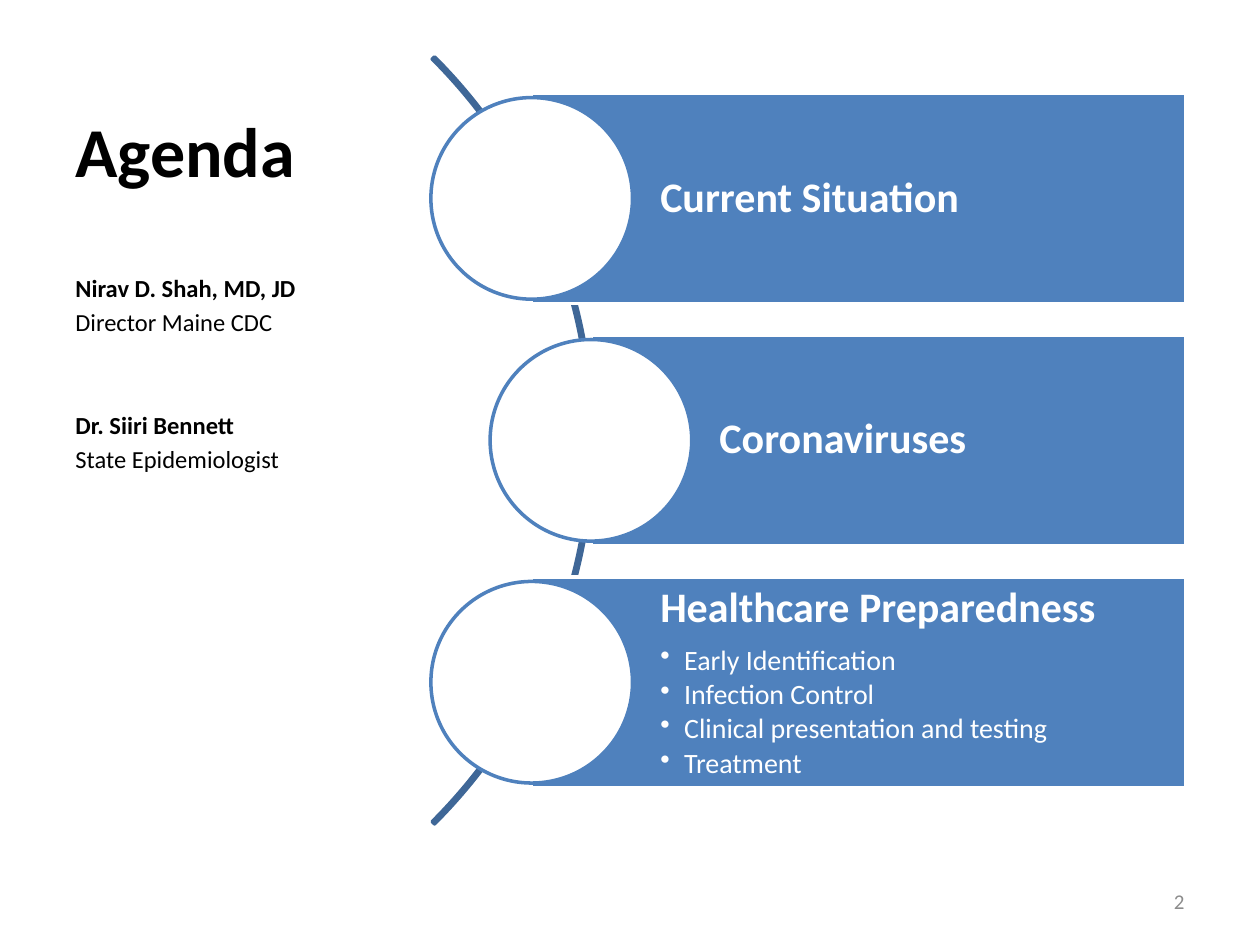
from lxml import etree
from pptx import Presentation, util as u
from pptx.dml.color import RGBColor
from pptx.enum import shapes, text
from pptx.oxml.ns import qn

# Content
TITLE = "Agenda"
SPEAKERS = [
    ("Nirav D. Shah, MD, JD", "Director Maine CDC"),
    ("Dr. Siiri Bennett", "State Epidemiologist"),
]
# topic, its details, column of its circle's centre
TOPICS = [
    ("Current Situation", [], 4.22),
    ("Coronaviruses", [], 4.69),
    ("Healthcare Preparedness",
     ["Early Identification", "Infection Control",
      "Clinical presentation and testing", "Treatment"], 4.22),
]
PAGE = "2"

# Formats
COLORS = {"white": "FFFFFF", "bar": "4F81BD", "arc": "3F6797",
          "ink": "000000", "page": "8C8C8C"}
FORMATS = {
    "title": {"size": 40, "bold": True, "color": "ink"},
    "speaker": {"size": 14, "bold": True, "color": "ink"},
    "role": {"size": 14, "bold": False, "color": "ink"},
    "topic": {"size": 24, "bold": True, "color": "white"},
    "detail": {"size": 16, "bold": False, "color": "white"},
    "page": {"size": 12, "bold": False, "color": "page"},
}

# Grid, in inches
WIDTH, HEIGHT = 10, 7.5
LEFT = WIDTH * 0.05
BAR_TOP, BAR_HEIGHT, BAR_PITCH, BAR_RIGHT = 0.74, 1.67, 1.92, 9.41
CIRCLE, ARC = 1.6, 8.61
BULLET_INDENT = 0.19

deck = Presentation()
deck.slide_width, deck.slide_height = u.Inches(WIDTH), u.Inches(HEIGHT)
slide = deck.slides.add_slide(deck.slide_layouts[6])


def rgb(name):
    return RGBColor.from_string(COLORS[name])


def inches(*lengths):
    return [u.Inches(length) for length in lengths]


def add_outlined(kind, place, line, fill=None):
    shape = slide.shapes.add_shape(kind, *inches(*place))
    shape.shadow.inherit = False
    if fill:
        shape.fill.solid()
        shape.fill.fore_color.rgb = rgb(fill)
    else:
        shape.fill.background()
    shape.line.color.rgb = rgb(line)
    shape.line.width = u.Pt(2)
    return shape


def set_frame(shape, anchor, margins=(0.1, 0.05, 0.1, 0.05)):
    frame = shape.text_frame
    frame.word_wrap = True
    frame.vertical_anchor = anchor
    for side, margin in zip(("left", "top", "right", "bottom"), margins):
        setattr(frame, "margin_" + side, u.Inches(margin))
    return frame


def add_line(frame, words, style, bullet=False, **spacing):
    first = not frame.paragraphs[0].runs
    line = frame.paragraphs[0] if first else frame.add_paragraph()
    line.alignment = text.PP_ALIGN.LEFT
    for key, value in spacing.items():
        setattr(line, key, value)
    if bullet:
        props = line._p.get_or_add_pPr()
        props.set("marL", str(u.Inches(BULLET_INDENT)))
        props.set("indent", str(-u.Inches(BULLET_INDENT)))
        etree.SubElement(props, qn("a:buChar")).set("char", "•")
    run = line.add_run()
    run.text = words
    look = FORMATS[style]
    for key, value in {"name": "Calibri", "size": u.Pt(look["size"]),
                       "bold": look["bold"]}.items():
        setattr(run.font, key, value)
    run.font.color.rgb = rgb(look["color"])
    return line


def add_box(place, anchor, **margins):
    return set_frame(slide.shapes.add_textbox(*inches(*place)), anchor, **margins)


# Title
add_line(add_box((LEFT, 0.3, 3.29, 1.27), text.MSO_ANCHOR.BOTTOM), TITLE, "title")

# Arc behind the topics, from 315 to 45 degrees
arc = add_outlined(shapes.MSO_SHAPE.BLOCK_ARC, (-3.9, -0.81, ARC, ARC), "arc")
for index, value in enumerate((189, 27, 0.003)):
    arc.adjustments[index] = value

# Topic bars, each with a circle on the middle of its left side
for row, (topic, details, column) in enumerate(TOPICS):
    top = BAR_TOP + row * BAR_PITCH
    bar = add_outlined(shapes.MSO_SHAPE.RECTANGLE,
                       (column, top, BAR_RIGHT - column, BAR_HEIGHT), "white", "bar")
    anchor = text.MSO_ANCHOR.TOP if details else text.MSO_ANCHOR.MIDDLE
    frame = set_frame(bar, anchor, (1.02, 0.07, 0.07, 0.07))
    add_line(frame, topic, "topic", line_spacing=0.9, space_after=u.Pt(8.4))
    for detail in details:
        add_line(frame, detail, "detail", bullet=True,
                 line_spacing=0.9, space_after=u.Pt(2.4))
    add_outlined(shapes.MSO_SHAPE.OVAL,
                 (column - CIRCLE / 2, top + (BAR_HEIGHT - CIRCLE) / 2, CIRCLE, CIRCLE),
                 "bar", "white")

# Speakers
frame = add_box((LEFT, 1.57, 2.5, 5.13), text.MSO_ANCHOR.TOP,
                margins=(0.1, 0.6, 0.1, 0.05))
for order, (speaker, role) in enumerate(SPEAKERS):
    add_line(frame, speaker, "speaker", space_before=u.Pt(42 if order else 0))
    add_line(frame, role, "role", space_before=u.Pt(2.5))

# Page number
page_line = add_line(add_box((7.17, 6.95, 2.33, 0.4), text.MSO_ANCHOR.MIDDLE), PAGE, "page")
page_line.alignment = text.PP_ALIGN.RIGHT

deck.save("out.pptx")
